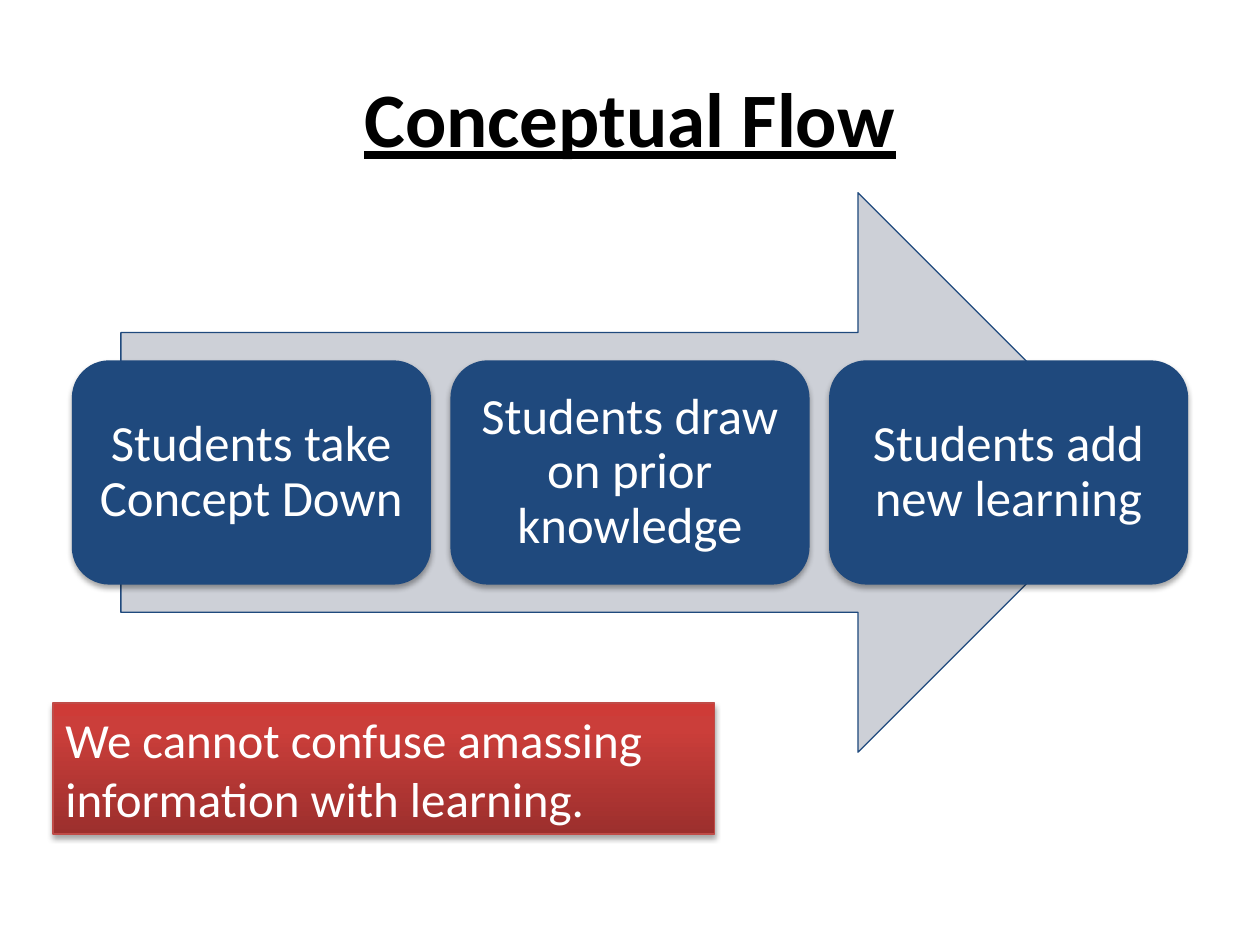
from copy import deepcopy

from pptx import Presentation
from pptx.dml.color import RGBColor
from pptx.enum.shapes import MSO_SHAPE as SHAPE
from pptx.enum.text import MSO_ANCHOR as ANCHOR, PP_ALIGN as ALIGN
from pptx.oxml import parse_xml
from pptx.oxml.ns import nsdecls, qn
from pptx.util import Inches, Pt

BLACK = RGBColor(0x00, 0x00, 0x00)
WHITE = RGBColor(0xFF, 0xFF, 0xFF)
NAVY = RGBColor(0x1F, 0x49, 0x7D)
GREY = RGBColor(0xCD, 0xD0, 0xD7)
RED_EDGE = RGBColor(0xBF, 0x4C, 0x48)
RED_STOPS = [
    (0, RGBColor(0x9C, 0x2F, 0x2D)),
    (0.8, RGBColor(0xCB, 0x3E, 0x3A)),
    (1, RGBColor(0xCE, 0x3B, 0x37)),
]
STEPS = [
    "Students take Concept Down",
    "Students draw on prior knowledge",
    "Students add new learning",
]


def add_shape(kind, left, top, width, height):
    sp = s.shapes.add_shape(
        kind, Inches(left), Inches(top), Inches(width), Inches(height)
    )
    sp.shadow.inherit = False
    return sp


def add_shadow(sp):
    sp._element.spPr.find(qn("a:effectLst")).append(parse_xml(
        f'<a:outerShdw {nsdecls("a")} blurRad="{Pt(3.1)}" dist="{Pt(1.8)}" '
        'dir="5400000" rotWithShape="0"><a:srgbClr val="000000">'
        '<a:alpha val="35000"/></a:srgbClr></a:outerShdw>'
    ))


prs = Presentation()
prs.slide_width, prs.slide_height = Inches(10), Inches(7.5)
s = prs.slides.add_slide(prs.slide_layouts[5])

title = s.shapes.title
title.left, title.top = Inches(0.5), Inches(0.3)
title.width, title.height = Inches(9), Inches(1.25)
tf = title.text_frame
tf.text = "Conceptual Flow"
tf.vertical_anchor = ANCHOR.MIDDLE
p = tf.paragraphs[0]
p.alignment = ALIGN.CENTER
r = p.runs[0]
r.font.name, r.font.size = "Calibri", Pt(44)
r.font.bold = r.font.underline = True
r.font.color.rgb = BLACK

arrow = add_shape(SHAPE.RIGHT_ARROW, 0.96, 1.53, 8.07, 4.44)
arrow.fill.solid()
arrow.fill.fore_color.rgb = GREY
arrow.line.color.rgb = NAVY
arrow.line.width = Pt(0.75)

for i, step in enumerate(STEPS):
    box = add_shape(SHAPE.ROUNDED_RECTANGLE, 0.57 + i * 3.005, 2.86, 2.85, 1.78)
    box.fill.solid()
    box.fill.fore_color.rgb = NAVY
    box.line.fill.background()
    add_shadow(box)
    tf = box.text_frame
    tf.text = step
    tf.word_wrap = True
    tf.vertical_anchor = ANCHOR.MIDDLE
    tf.margin_left = tf.margin_right = Inches(0.12)
    tf.margin_top = tf.margin_bottom = Inches(0.12)
    p = tf.paragraphs[0]
    p.alignment = ALIGN.CENTER
    p.line_spacing = 0.9
    p.font.name, p.font.size = "Calibri", Pt(29)
    p.font.color.rgb = WHITE

note = add_shape(SHAPE.RECTANGLE, 0.42, 5.58, 5.25, 1.04)
note.fill.gradient()
note.fill.gradient_angle = 90
stop_list = note._element.spPr.find(qn("a:gradFill")).find(qn("a:gsLst"))
stop_list.append(deepcopy(stop_list[-1]))
for stop, (position, color) in zip(note.fill.gradient_stops, RED_STOPS):
    stop.position = position
    stop.color.rgb = color
note.line.color.rgb = RED_EDGE
note.line.width = Pt(0.75)
add_shadow(note)
tf = note.text_frame
tf.text = "We cannot confuse amassing information with learning."
tf.word_wrap = True
tf.vertical_anchor = ANCHOR.TOP
p = tf.paragraphs[0]
p.alignment = ALIGN.LEFT
p.font.name, p.font.size = "Calibri", Pt(28)
p.font.color.rgb = WHITE

prs.save("out.pptx")
